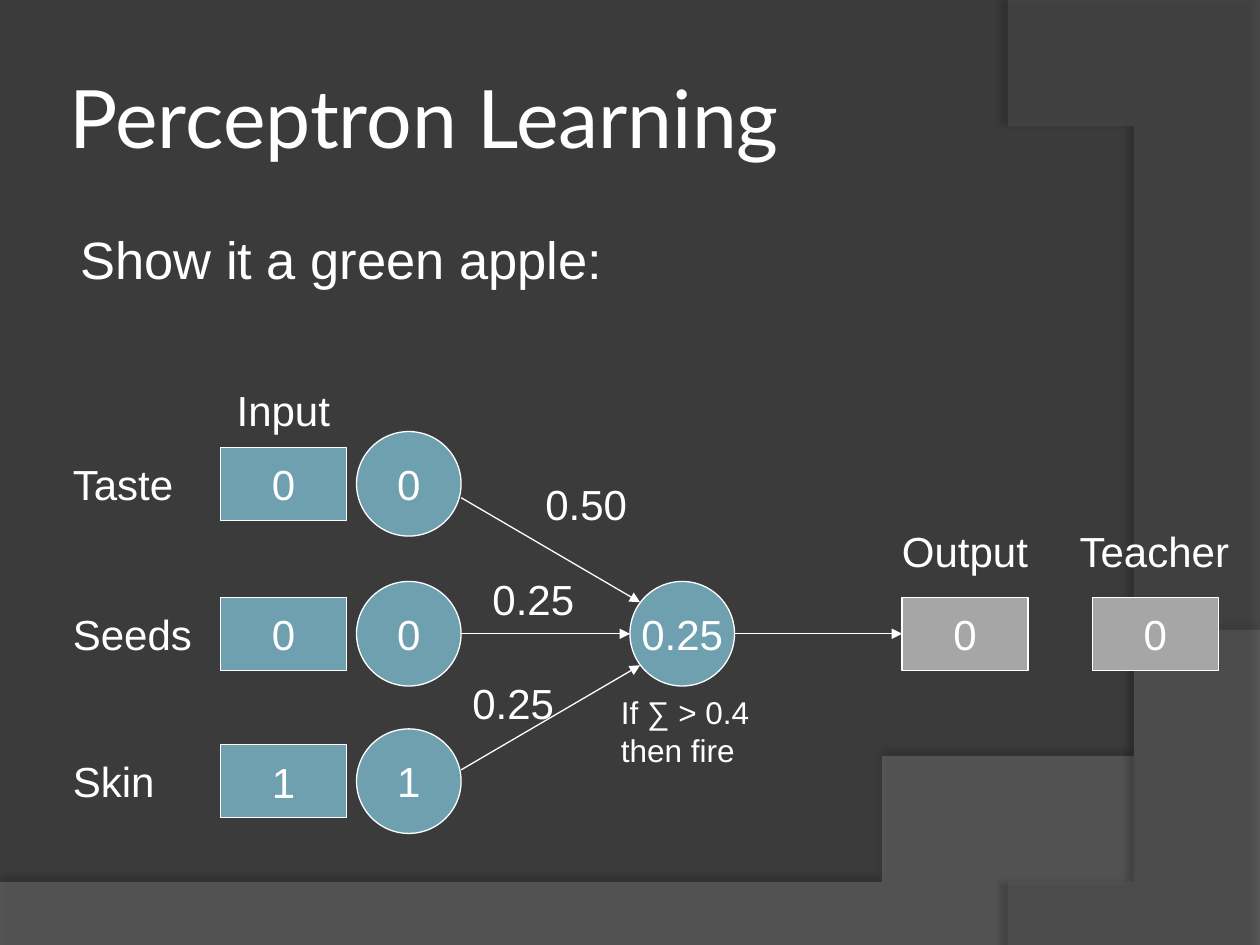
from lxml.etree import SubElement
from pptx import Presentation
from pptx.dml.color import RGBColor
from pptx.enum.shapes import MSO_CONNECTOR, MSO_SHAPE
from pptx.enum.text import MSO_ANCHOR, MSO_AUTO_SIZE, PP_ALIGN
from pptx.oxml.ns import qn
from pptx.util import Inches, Pt

WHITE = RGBColor(0xFF, 0xFF, 0xFF)
CHARCOAL = RGBColor(0x3B, 0x3B, 0x3B)
LOWER_GRAY = RGBColor(0x7C, 0x7C, 0x7C)
RIGHT_GRAY = RGBColor(0x59, 0x59, 0x59)
TEAL = RGBColor(0x6E, 0xA0, 0xB0)
SILVER = RGBColor(0xA6, 0xA6, 0xA6)

WIDTH, HEIGHT = 10, 7.5
ROWS = [3.84, 5.03, 6.2]  # centre lines of taste, seeds and skin
MIDDLE = ROWS[1]
NAME_X, INPUT_X, NEURON_X, SUM_X, OUTPUT_X, TEACHER_X = 0.48, 1.75, 2.83, 5, 7.16, 8.67
DIAMETER, BOX_W, BOX_H = 0.83, 1, 0.58
LABEL_H = 0.5

prs = Presentation()
prs.slide_width, prs.slide_height = Inches(WIDTH), Inches(HEIGHT)
slide = prs.slides.add_slide(prs.slide_layouts[5])
slide.background.fill.solid()
slide.background.fill.fore_color.rgb = CHARCOAL
shapes = slide.shapes


def add_label(x, y, w, h, lines, size=24, wrap=False):
    """Place a left-aligned white text box and return its text frame."""
    frame = shapes.add_textbox(Inches(x), Inches(y), Inches(w), Inches(h)).text_frame
    frame.word_wrap = wrap
    frame.auto_size = MSO_AUTO_SIZE.NONE if wrap else MSO_AUTO_SIZE.SHAPE_TO_FIT_TEXT
    for i, line in enumerate(lines):
        paragraph = frame.add_paragraph() if i else frame.paragraphs[0]
        run = paragraph.add_run()
        run.text = line
        run.font.size, run.font.name = Pt(size), "Arial"
        run.font.color.rgb = WHITE
    return frame


def add_node(kind, x, middle, w, h, value, color):
    """Place an outlined shape holding a value, centred on a row."""
    node = shapes.add_shape(kind, Inches(x), Inches(middle - h / 2), Inches(w), Inches(h))
    node.shadow.inherit = False
    node.fill.solid()
    node.fill.fore_color.rgb = color
    node.line.color.rgb, node.line.width = WHITE, Pt(0.75)
    frame = node.text_frame
    frame.word_wrap, frame.vertical_anchor = False, MSO_ANCHOR.MIDDLE
    frame.paragraphs[0].alignment = PP_ALIGN.CENTER
    run = frame.paragraphs[0].add_run()
    run.text = value
    run.font.size, run.font.name = Pt(24), "Arial"
    run.font.color.rgb = WHITE
    return node


# Background waves: cubic curve, remaining corners, colour, opacity and shadow
waves = [
    ([(10, 5.2), (5.59, 7.29), (3.91, 7.19), (0, 7.05)],
     [(0, HEIGHT), (WIDTH, HEIGHT)], LOWER_GRAY, 45, (35, 4, 3.5, 270)),
    ([(8.21, 7.5), (9.35, 6.19), (10.18, 3), (8, 0)],
     [(WIDTH, 0.02), (WIDTH, HEIGHT)], RIGHT_GRAY, 40, (45, 4, 4, 180)),
]
STEPS = 60
for curve, corners, color, opacity, (density, blur, distance, angle) in waves:
    points = []
    for step in range(STEPS + 1):
        t = step / STEPS
        weights = [(1 - t) ** 3, 3 * t * (1 - t) ** 2, 3 * t ** 2 * (1 - t), t ** 3]
        points.append(tuple(sum(k * p[axis] for k, p in zip(weights, curve)) for axis in (0, 1)))
    builder = shapes.build_freeform(*points[0], scale=Inches(1))
    builder.add_line_segments(points[1:] + corners, close=True)
    wave = builder.convert_to_shape()
    wave.fill.solid()
    wave.fill.fore_color.rgb = color
    wave.line.fill.background()
    wave.shadow.inherit = False
    properties = wave.element.spPr
    SubElement(properties.find(".//" + qn("a:srgbClr")), qn("a:alpha"), val=str(opacity * 1000))
    shadow = SubElement(properties.find(qn("a:effectLst")), qn("a:outerShdw"),
                        blurRad=str(Pt(blur)), dist=str(Pt(distance)),
                        dir=str(angle * 60000), algn="ctr", rotWithShape="0")
    shade = SubElement(shadow, qn("a:srgbClr"), val="000000")
    SubElement(shade, qn("a:alpha"), val=str(density * 1000))

# Title, in front of the waves
title = shapes.title
title.element.getparent().append(title.element)
title.left, title.top, title.width, title.height = map(Inches, (0.5, 0.3, 8.17, 1.25))
heading = title.text_frame
heading.margin_left = heading.margin_right = Inches(0.05)
heading.margin_top = heading.margin_bottom = Inches(0.05)
heading.vertical_anchor = MSO_ANCHOR.MIDDLE
heading.paragraphs[0].alignment = PP_ALIGN.LEFT
run = heading.paragraphs[0].add_run()
run.text = "Perceptron Learning"
run.font.size, run.font.name = Pt(46), "Lato"
run.font.color.rgb = WHITE

prompt = add_label(0.5, 1.75, 8.17, 4.95, ["Show it a green apple:"], 30, wrap=True).paragraphs[0]
prompt.space_before = Pt(6)
indents = prompt._p.get_or_add_pPr()
indents.set("marL", str(Inches(0.46)))
indents.set("indent", str(Inches(-0.42)))

# Inputs: name, value box and neuron on each row
for middle, name, name_w, value in zip(
        ROWS, ["Taste", "Seeds", "Skin"], [1.03, 1.15, 0.85], ["0", "0", "1"]):
    add_label(NAME_X, middle - LABEL_H / 2, name_w, LABEL_H, [name])
    add_node(MSO_SHAPE.RECTANGLE, INPUT_X, middle, BOX_W, BOX_H, value, TEAL)
    add_node(MSO_SHAPE.OVAL, NEURON_X, middle, DIAMETER, DIAMETER, value, TEAL)

add_node(MSO_SHAPE.OVAL, SUM_X, MIDDLE, DIAMETER, DIAMETER, "0.25", TEAL)
output = add_node(MSO_SHAPE.RECTANGLE, OUTPUT_X, MIDDLE, BOX_W, BOX_H, "0", SILVER)
add_node(MSO_SHAPE.RECTANGLE, TEACHER_X, MIDDLE, BOX_W, BOX_H, "0", SILVER)

# Arrows into and out of the summing neuron
neuron_right, sum_right = NEURON_X + DIAMETER, SUM_X + DIAMETER
arrows = [
    (neuron_right, 3.95, SUM_X + 0.08, 4.78, None),
    (neuron_right, MIDDLE, SUM_X, MIDDLE, None),
    (neuron_right, 6.11, SUM_X + 0.08, 5.28, None),
    (sum_right, MIDDLE, OUTPUT_X, MIDDLE, output),
]
for x1, y1, x2, y2, target in arrows:
    arrow = shapes.add_connector(MSO_CONNECTOR.STRAIGHT, *map(Inches, (x1, y1, x2, y2)))
    if target is not None:
        arrow.end_connect(target, 1)
    arrow.line.color.rgb, arrow.line.width = WHITE, Pt(0.75)
    SubElement(arrow.line._get_or_add_ln(), qn("a:tailEnd"), type="triangle")
    SubElement(arrow.element.spPr, qn("a:effectLst"))

# Weights and column headings
for x, y, w, text in [
    (4.23, 3.75, 0.85, "0.50"), (3.81, 4.5, 0.85, "0.25"), (3.65, 5.33, 0.85, "0.25"),
    (1.78, 3, 0.94, "Input"), (7.06, 4.12, 1.2, "Output"), (8.47, 4.12, 1.4, "Teacher"),
]:
    add_label(x, y, w, LABEL_H, [text])
add_label(4.83, 5.45, 1.37, 0.7, ["If ∑ > 0.4", "then fire"], 18)

prs.save("out.pptx")
